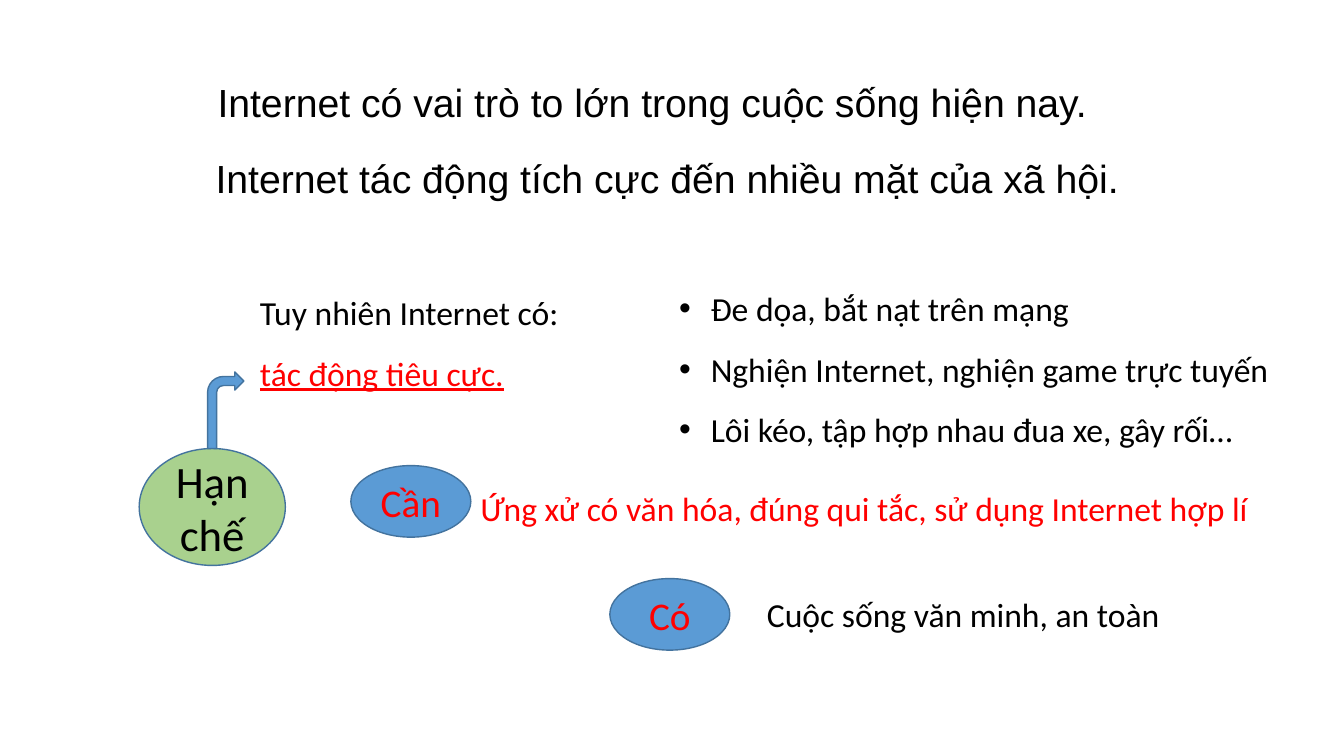
from pptx import Presentation
from pptx.dml.color import RGBColor
from pptx.enum.shapes import MSO_SHAPE
from pptx.enum.text import MSO_ANCHOR, PP_ALIGN
from pptx.util import Pt
from lxml.etree import SubElement


def color(code):
    return RGBColor.from_string(code)


def write(frame, lines, size, font, ink):
    frame.word_wrap = True
    frame.text = "\n".join(lines)
    for para in frame.paragraphs:
        for run in para.runs:
            run.font.size = Pt(size)
            run.font.name = font
            run.font.color.rgb = color(ink)


BLACK, RED, BLUE, GREEN, EDGE = "000000", "FF0000", "5B9BD5", "A9D18E", "43739E"

deck = Presentation()
deck.slide_width = Pt(960)
deck.slide_height = Pt(540)
slide = deck.slides.add_slide(deck.slide_layouts[6])

texts = [
    (148.3, 52.6, 743.8, 74.9, 28, "Arial", BLACK, 1,
     ["Internet có vai trò to lớn trong cuộc sống hiện nay."]),
    (146.9, 106.6, 662.4, 74.9, 28, "Arial", BLACK, 1,
     ["Internet tác động tích cực đến nhiều mặt của xã hội."]),
    (178.6, 190.8, 242.6, 94.3, 24, "Calibri", BLACK, 1.5,
     ["Tuy nhiên Internet có:", "tác động tiêu cực."]),
    (478.1, 187.9, 445, 138.2, 24, "Calibri", BLACK, 1.5,
     ["Đe dọa, bắt nạt trên mạng",
      "Nghiện Internet, nghiện game trực tuyến",
      "Lôi kéo, tập hợp nhau đua xe, gây rối…"]),
    (336.2, 344.9, 586.8, 36, 24, "Calibri", RED, 1,
     ["Ứng xử có văn hóa, đúng qui tắc, sử dụng Internet hợp lí"]),
    (540.7, 420.5, 320.4, 36, 24, "Calibri", BLACK, 1,
     ["Cuộc sống văn minh, an toàn"]),
]
frames = []
for left, top, width, height, size, font, ink, space, lines in texts:
    box = slide.shapes.add_textbox(Pt(left), Pt(top), Pt(width), Pt(height))
    frame = box.text_frame
    write(frame, lines, size, font, ink)
    for para in frame.paragraphs:
        para.line_spacing = space
    frames.append(frame)

effect = frames[2].paragraphs[1].runs[0].font
effect.color.rgb = color(RED)
effect.underline = True

for para in frames[3].paragraphs:
    props = para._p.get_or_add_pPr()
    props.set("marL", str(Pt(22.5)))
    props.set("indent", str(-Pt(22.5)))
    space = props.tag.removesuffix("pPr")
    SubElement(props, space + "buFont", typeface="Arial")
    SubElement(props, space + "buChar", char="•")

shapes = [
    (MSO_SHAPE.OVAL, 99.4, 320.4, 104.4, 83.5, GREEN, "Hạn chế", 32, BLACK),
    (MSO_SHAPE.BENT_ARROW, 148.3, 265.7, 25.9, 54.7, BLUE, "", 28, RED),
    (MSO_SHAPE.OVAL, 435.6, 413.3, 85.7, 51.1, BLUE, "Có", 28, RED),
    (MSO_SHAPE.OVAL, 250.6, 332.6, 85.7, 51.1, BLUE, "Cần", 28, RED),
]
for kind, left, top, width, height, fill, label, size, ink in shapes:
    shape = slide.shapes.add_shape(kind, Pt(left), Pt(top), Pt(width), Pt(height))
    shape.shadow.inherit = False
    shape.fill.solid()
    shape.fill.fore_color.rgb = color(fill)
    shape.line.color.rgb = color(EDGE)
    shape.line.width = Pt(1)
    if label:
        write(shape.text_frame, [label], size, "Calibri", ink)
        shape.text_frame.vertical_anchor = MSO_ANCHOR.MIDDLE
        shape.text_frame.paragraphs[0].alignment = PP_ALIGN.CENTER

deck.save("out.pptx")
